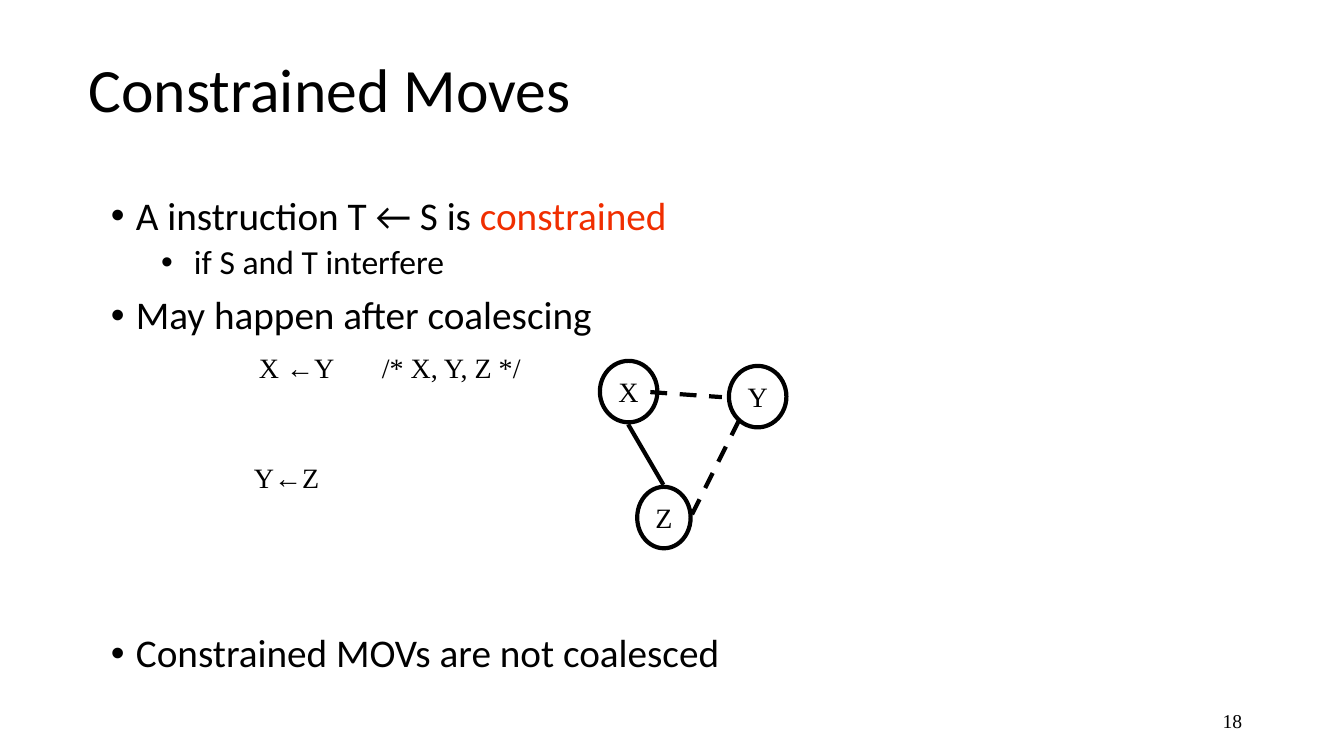
from dataclasses import dataclass

from lxml import etree
from pptx import Presentation
from pptx.dml.color import RGBColor
from pptx.enum.dml import MSO_LINE
from pptx.enum.shapes import MSO_CONNECTOR, MSO_SHAPE
from pptx.enum.text import MSO_ANCHOR, PP_ALIGN
from pptx.oxml.ns import qn
from pptx.util import Inches, Pt

BLACK = RGBColor(0x00, 0x00, 0x00)
RED = RGBColor(0xF0, 0x2E, 0x00)
SANS = "Calibri"
SERIF = "Times New Roman"
DASH = MSO_LINE.DASH
STRAIGHT = MSO_CONNECTOR.STRAIGHT
OVAL = MSO_SHAPE.OVAL
TOP, MIDDLE = MSO_ANCHOR.TOP, MSO_ANCHOR.MIDDLE
LEFT, CENTER, RIGHT = PP_ALIGN.LEFT, PP_ALIGN.CENTER, PP_ALIGN.RIGHT


@dataclass
class Bullet:
    runs: list[tuple[str, RGBColor]]
    size: int = 28
    level: int = 0
    before: int = 10


@dataclass
class Node:
    name: str
    left: float
    top: float
    width: float = 0.57


@dataclass
class Edge:
    start: tuple[float, float]
    end: tuple[float, float]
    dashed: bool = False


@dataclass
class Label:
    text: str
    box: tuple[float, float, float, float]
    size: int = 20
    font: str = SERIF
    align: PP_ALIGN = LEFT
    anchor: MSO_ANCHOR = TOP
    spacing: float = 1.0
    tab: float = 0


BULLETS = [
    Bullet([("A instruction T ← S is ", BLACK), ("constrained", RED)]),
    Bullet([(" if S and T interfere", BLACK)], size=24, level=1, before=5),
    Bullet([("May happen after coalescing", BLACK)]),
    Bullet([("Constrained MOVs are not coalesced", BLACK)], before=211),
]
NODES = [
    Node("X", 5.95, 3.58),
    Node("Y", 7.23, 3.63),
    Node("Z", 6.32, 4.83, 0.53),
]
EDGES = [
    Edge((6.45, 3.89), (7.16, 3.94), dashed=True),
    Edge((7.33, 4.17), (6.85, 5.13), dashed=True),
    Edge((6.23, 4.21), (6.58, 4.81)),
]
LABELS = [
    Label("Constrained Moves", (0.78, 0.27, 10.17, 1.3), size=44, font=SANS,
          anchor=MIDDLE, spacing=0.9),
    Label("X ←Y\t/* X, Y, Z */", (2.47, 3.43, 3.3, 0.43), tab=1.22),
    Label("Y←Z", (2.42, 4.52, 2.43, 0.43)),
    Label("18", (9.42, 6.95, 3, 0.4), size=14, align=RIGHT, anchor=MIDDLE),
]


def add_run(p, text: str, *, size: int = 20, font: str = SERIF,
            color: RGBColor = BLACK) -> None:
    r = p.add_run()
    r.text = text
    r.font.size = Pt(size)
    r.font.name = font
    r.font.color.rgb = color


def add_box(slide, box: tuple[float, float, float, float], anchor: MSO_ANCHOR = TOP):
    tf = slide.shapes.add_textbox(*map(Inches, box)).text_frame
    tf.word_wrap = True
    tf.vertical_anchor = anchor
    return tf


def add_label(slide, label: Label) -> None:
    p = add_box(slide, label.box, label.anchor).paragraphs[0]
    p.alignment = label.align
    p.line_spacing = label.spacing
    if label.tab:
        tabs = etree.SubElement(p._p.get_or_add_pPr(), qn("a:tabLst"))
        etree.SubElement(tabs, qn("a:tab"), pos=str(Inches(label.tab)), algn="l")
    add_run(p, label.text, size=label.size, font=label.font)


def add_bullets(slide, bullets: list[Bullet]) -> None:
    tf = add_box(slide, (1, 1.9, 11.42, 4.92))
    for i, bullet in enumerate(bullets):
        p = tf.add_paragraph() if i else tf.paragraphs[0]
        p.level = bullet.level
        p.line_spacing = 0.9
        p.space_before = Pt(bullet.before)
        pPr = p._p.get_or_add_pPr()
        pPr.set("marL", str(Inches(0.25 + 0.5 * bullet.level)))
        pPr.set("indent", str(Inches(-0.25)))
        etree.SubElement(pPr, qn("a:buFont"), typeface="Arial")
        etree.SubElement(pPr, qn("a:buChar"), char="•")
        for text, color in bullet.runs:
            add_run(p, text, size=bullet.size, font=SANS, color=color)


def add_node(slide, node: Node) -> None:
    sp = slide.shapes.add_shape(OVAL, Inches(node.left), Inches(node.top),
                                Inches(node.width), Inches(0.61))
    sp.shadow.inherit = False
    sp.fill.background()
    sp.line.color.rgb = BLACK
    sp.line.width = Pt(3)
    tf = sp.text_frame
    tf.word_wrap = False
    tf.vertical_anchor = MIDDLE
    p = tf.paragraphs[0]
    p.alignment = CENTER
    add_run(p, node.name)


def add_edge(slide, edge: Edge) -> None:
    line = slide.shapes.add_connector(STRAIGHT, *map(Inches, edge.start + edge.end))
    line.line.color.rgb = BLACK
    line.line.width = Pt(3)
    if edge.dashed:
        line.line.dash_style = DASH
    etree.SubElement(line._element.spPr, qn("a:effectLst"))


def main() -> None:
    prs = Presentation()
    prs.slide_width, prs.slide_height = Inches(13.33), Inches(7.5)
    slide = prs.slides.add_slide(prs.slide_layouts[6])
    add_bullets(slide, BULLETS)
    for node in NODES:
        add_node(slide, node)
    for edge in EDGES:
        add_edge(slide, edge)
    for label in LABELS:
        add_label(slide, label)
    prs.save("out.pptx")


if __name__ == "__main__":
    main()
